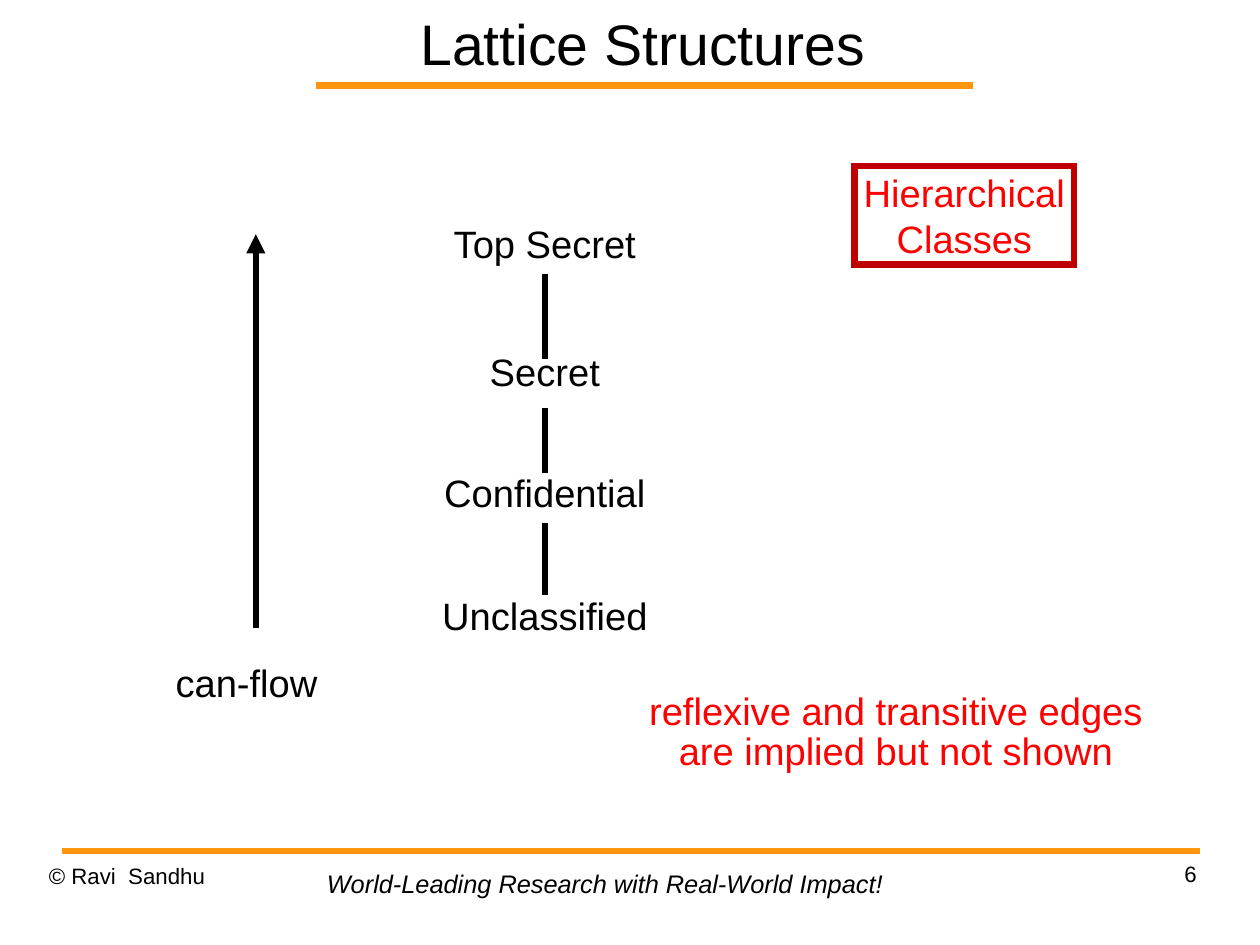
from lxml import etree
from pptx import Presentation, util as u
from pptx.dml.color import RGBColor
from pptx.enum import shapes, text
from pptx.oxml.ns import qn

BLACK = RGBColor(0, 0, 0)
RED = RGBColor(0xFF, 0, 0)
DARK_RED = RGBColor(0xC0, 0, 0)
ORANGE = RGBColor(0xFF, 0x95, 0x0E)
LEFT, CENTER, RIGHT = text.PP_ALIGN.LEFT, text.PP_ALIGN.CENTER, text.PP_ALIGN.RIGHT
FLUSH, SNUG, ROOMY = (0, 0), (0.07, 0.03), (0.1, 0.05)  # side and top insets, inches

# Places are percentages of the slide's width and height.
RULES = [(25.05, 77.2, 9.05), (4.95, 95.25, 90.05)]  # left, right, y
TITLE = ("Lattice Structures", (21.84, 0, 58.35, 9.07))
COPYRIGHT = ("© Ravi  Sandhu", (3.88, 91.25, 23.32, 6.89))
NUMBER = ("6", (71.66, 91.05, 23.32, 6.89))
TAGLINE = ("World-Leading Research with Real-World Impact!", (25.05, 91.29, 46.1, 4.47))
CLASSES = ("Hierarchical\nClasses", (67.82, 17.6, 17.42, 10.4))
FLOW = ("can-flow", (13.3, 70.13, 14.07, 5.56))
NOTE = ("reflexive and transitive edges are implied but not shown",
        (48.73, 73, 44.74, 9.31))
FLOW_ARROW = (20.3, 66.48, 24.79)  # x, bottom, top

LEVEL_X, LEVEL_H = 43.24, 4.96
LEVELS = [  # label, top, width, bottom and top of the link to the level above
    ("Unclassified", 62.95, 17.79, 62.95, 55.38),
    ("Confidential", 50.03, 17.42, 50.03, 43.17),
    ("Secret", 37.22, 10.07, 37.95, 29.02),
    ("Top Secret", 23.65, 15.88, None, None),
]

prs = Presentation()
prs.slide_width, prs.slide_height = u.Cm(28), u.Cm(21)
s = prs.slides.add_slide(prs.slide_layouts[6])


def px(share):
    return round(prs.slide_width * share / 100)


def py(share):
    return round(prs.slide_height * share / 100)


def fill_text(sp, words, size, color=BLACK, align=LEFT, insets=SNUG,
              spacing=None, wrap=True, grow=True, italic=False):
    tf = sp.text_frame
    tf.text = words
    tf.word_wrap = wrap
    tf.auto_size = text.MSO_AUTO_SIZE.SHAPE_TO_FIT_TEXT if grow else text.MSO_AUTO_SIZE.NONE
    tf.margin_left = tf.margin_right = u.Inches(insets[0])
    tf.margin_top = tf.margin_bottom = u.Inches(insets[1])
    for p in tf.paragraphs:
        p.alignment, p.line_spacing = align, spacing
        p.font.name, p.font.size = "Arial", u.Pt(size)
        p.font.color.rgb, p.font.italic = color, italic
    return tf


def place(box):
    x, y, w, h = box
    return px(x), py(y), px(w), py(h)


def add_text(item, size, **style):
    words, box = item
    sp = s.shapes.add_textbox(*place(box))
    fill_text(sp, words, size, **style)
    return sp


def add_line(x1, y1, x2, y2, color=BLACK, width=4):
    sp = s.shapes.add_connector(shapes.MSO_CONNECTOR.STRAIGHT, px(x1), py(y1), px(x2), py(y2))
    sp.line.color.rgb, sp.line.width = color, u.Pt(width)
    etree.SubElement(sp._element.spPr, qn("a:effectLst"))
    return sp


for left, right, y in RULES:
    add_line(left, y, right, y, ORANGE, 4.31)

add_text(COPYRIGHT, 14, insets=FLUSH, spacing=1.01, grow=False)
add_text(NUMBER, 14, align=RIGHT, insets=FLUSH, spacing=1.01, grow=False)
add_text(TAGLINE, 16, insets=ROOMY, wrap=False, italic=True)
title = add_text(TITLE, 36, align=CENTER, insets=FLUSH, grow=False)
title.text_frame.vertical_anchor = text.MSO_ANCHOR.MIDDLE

for label, top, width, link_bottom, link_top in LEVELS:
    level = add_text((label, (LEVEL_X - width / 2, top, width, LEVEL_H)), 24,
                     align=CENTER, spacing=0.87, wrap=False)
    if link_top is not None:
        link = add_line(LEVEL_X, link_bottom, LEVEL_X, link_top)
        if link_bottom == top:
            link.begin_connect(level, 0)

classes = s.shapes.add_shape(shapes.MSO_SHAPE.RECTANGLE, *place(CLASSES[1]))
classes.shadow.inherit = False
classes.fill.background()
classes.line.color.rgb, classes.line.width = DARK_RED, u.Pt(4)
etree.SubElement(classes.line._get_or_add_ln(), qn("a:miter"), lim="800000")
tf = fill_text(classes, CLASSES[0], 24, color=RED, align=CENTER, wrap=False)
tf.vertical_anchor = text.MSO_ANCHOR.TOP

x, bottom, top = FLOW_ARROW
arrow = add_line(x, bottom, x, top)
etree.SubElement(arrow.line._get_or_add_ln(), qn("a:tailEnd"), type="triangle")

add_text(FLOW, 24, spacing=0.87)
add_text(NOTE, 24, color=RED, align=CENTER, spacing=0.88)

prs.save("out.pptx")
